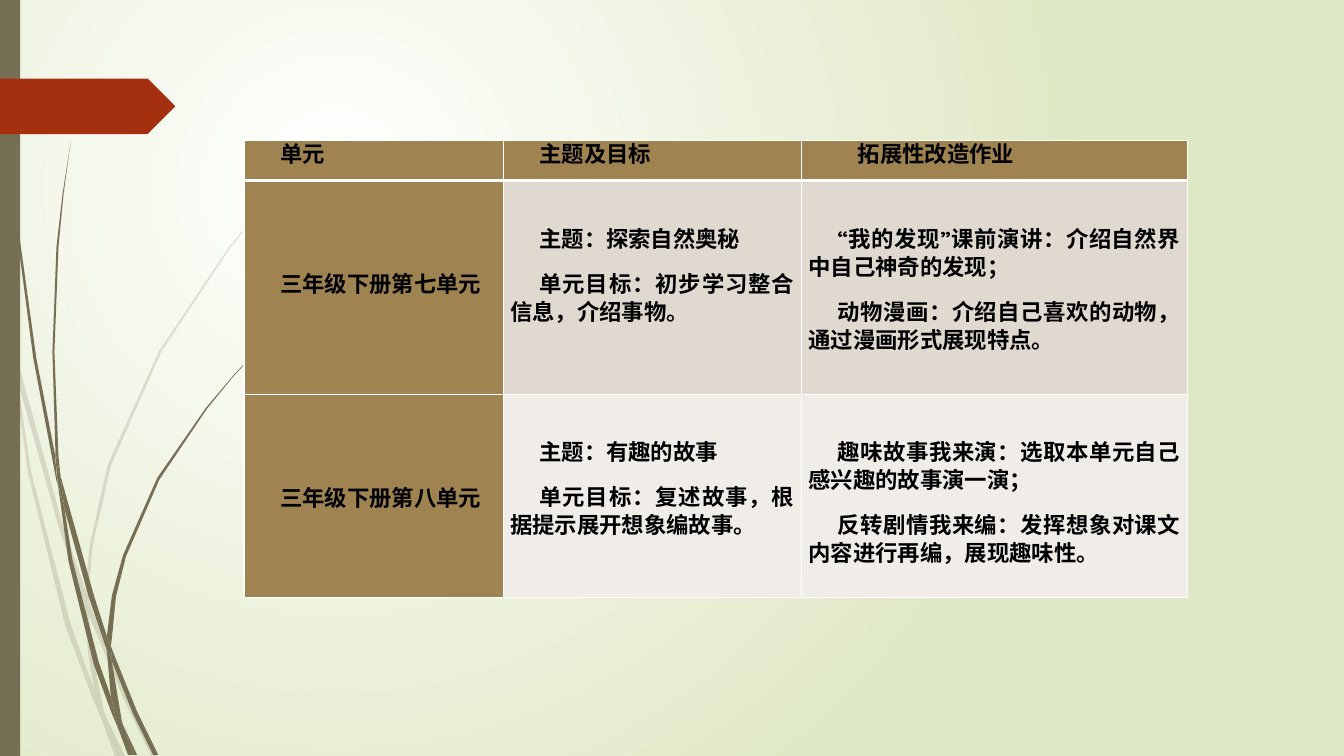
from lxml import etree
from pptx import Presentation, util as u
from pptx.dml.color import RGBColor
from pptx.enum import shapes, text
from pptx.oxml.ns import qn

PX = 9144
OLIVE, RED, BROWN, WHITE = "766F54", "A53010", "9F8351", "FFFFFF"

PALE_BLADES = [
    [(11, 350), (9, 322), (0, 282), (0, 299), (10, 344)],
    [(58, 522), (84, 599), (85, 586), (62, 520), (14, 345), (17, 376)],
    [(92, 607), (88, 596), (88, 610), (123, 694), (150, 750), (155, 750), (127, 692)],
    [(119, 750), (124, 750), (105, 711)],
    [(93, 683), (70, 619), (31, 469), (17, 376), (11, 350), (28, 470), (65, 621),
     (92, 693), (101, 714), (99, 707)],
    [(84, 599), (87, 646), (93, 683), (96, 692), (105, 711), (103, 706), (91, 646),
     (88, 610), (88, 608)],
    [(88, 584), (92, 541), (110, 462), (160, 349), (229, 245), (268, 198), (290, 175),
     (312, 154), (312, 153), (289, 175), (268, 197), (228, 244), (158, 348),
     (107, 461), (89, 541), (85, 584), (85, 586), (88, 596)],
    [(101, 714), (114, 750), (119, 750)],
    [(88, 608), (88, 610), (88, 596), (85, 586), (84, 599)],
    [(96, 692), (93, 683), (99, 707), (101, 714), (119, 750), (105, 711)],
]
DARK_BLADES = [
    [(7, 110), (17, 233), (33, 355), (56, 477), (57, 481), (55, 457), (55, 453),
     (36, 355), (19, 232), (8, 109), (5, 48), (4, 0), (3, 0), (4, 48)],
    [(88, 592), (106, 645), (106, 631), (93, 590), (60, 472), (64, 505)],
    [(113, 649), (110, 641), (111, 656), (132, 708), (152, 749), (157, 749), (136, 706)],
    [(110, 691), (98, 657), (72, 556), (64, 505), (57, 477), (68, 557), (93, 659),
     (111, 708), (117, 722), (116, 717)],
    [(60, 472), (58, 453), (54, 349), (58, 245), (63, 193), (70, 141), (62, 193),
     (56, 245), (52, 349), (55, 449)],
    [(133, 749), (136, 749), (122, 719)],
    [(57, 477), (64, 505), (60, 472), (55, 449), (55, 453)],
    [(111, 633), (115, 592), (125, 552), (158, 476), (205, 406), (231, 374), (245, 359),
     (261, 344), (260, 344), (245, 358), (231, 373), (204, 405), (156, 474),
     (122, 551), (111, 591), (106, 631), (110, 641)],
    [(117, 722), (127, 749), (131, 749)],
    [(106, 645), (110, 691), (116, 706), (122, 719), (121, 716), (111, 656), (109, 651)],
    [(106, 645), (109, 651), (111, 656), (110, 641), (106, 631)],
    [(116, 706), (110, 691), (116, 717), (117, 722), (130, 749), (133, 749), (122, 719)],
]
ROWS = [
    [["单元"], ["主题及目标"], ["拓展性改造作业"]],
    [["三年级下册第七单元"],
     ["主题：探索自然奥秘", "单元目标：初步学习整合信息，介绍事物。"],
     ["“我的发现”课前演讲：介绍自然界中自己神奇的发现；",
      "动物漫画：介绍自己喜欢的动物，通过漫画形式展现特点。"]],
    [["三年级下册第八单元"],
     ["主题：有趣的故事", "单元目标：复述故事，根据提示展开想象编故事。"],
     ["趣味故事我来演：选取本单元自己感兴趣的故事演一演；",
      "反转剧情我来编：发挥想象对课文内容进行再编，展现趣味性。"]],
]
BODY_FILLS = [BROWN, "DFD9D0", "F0EDE9"]


def rgb(color):
    """Turn a hex string into a colour."""
    return RGBColor.from_string(color)


def paint(sp, color, alpha=100):
    """Give a shape a plain fill without line or shadow."""
    sp.shadow.inherit = False
    sp.line.fill.background()
    sp.fill.solid()
    sp.fill.fore_color.rgb = rgb(color)
    if alpha < 100:
        clr = sp.fill._xPr.find(".//" + qn("a:srgbClr"))
        etree.SubElement(clr, qn("a:alpha"), val=str(alpha * 1000))


def set_background(s, inner, outer):
    """Fill the background with a circular gradient centred at the upper left."""
    fill = s.background.fill
    fill.gradient()
    for stop, color in zip(fill.gradient_stops, (inner, outer)):
        stop.color.rgb = rgb(color)
    grad = s._element.find(".//" + qn("a:gradFill"))
    grad.remove(grad.find(qn("a:lin")))
    circle = etree.SubElement(grad, qn("a:path"), path="circle")
    etree.SubElement(circle, qn("a:fillToRect"), l="50000", t="50000", r="100000", b="100000")


def add_block(s, kind, x, y, w, h, color):
    """Add a preset shape in one colour."""
    paint(s.shapes.add_shape(kind, x * PX, y * PX, w * PX, h * PX), color)


def add_blade(s, points, color, alpha=100):
    """Add one closed piece of a grass blade."""
    builder = s.shapes.build_freeform(*points[0], scale=PX)
    builder.add_line_segments(points[1:], close=True)
    paint(builder.convert_to_shape(), color, alpha)


def write(tf, lines, size=16, font="Quicksand", color="000000", bold=True, indent=29):
    """Write justified paragraphs with a first-line indent."""
    for i, line in enumerate(lines):
        p = tf.add_paragraph() if i else tf.paragraphs[0]
        p.alignment = text.PP_ALIGN.JUSTIFY
        p.line_spacing, p.space_after = u.Pt(20), u.Pt(12)
        p._p.get_or_add_pPr().set("indent", str(indent * PX))
        r = p.add_run()
        r.text = line
        r.font.size, r.font.bold, r.font.name = u.Pt(size), bold, font
        r.font.color.rgb = rgb(color)
        etree.SubElement(r._r.get_or_add_rPr(), qn("a:ea"), typeface=font)


def set_borders(cell, color, bottom=1, top=1):
    """Draw the four borders of a cell, widths in points."""
    tc_pr = cell._tc.get_or_add_tcPr()
    widths = {"lnL": 1, "lnR": 1, "lnT": top, "lnB": bottom}
    for i, (side, width) in enumerate(widths.items()):
        ln = etree.Element(qn("a:" + side), w=str(u.Pt(width)))
        fill = etree.SubElement(ln, qn("a:solidFill"))
        etree.SubElement(fill, qn("a:srgbClr"), val=color)
        tc_pr.insert(i, ln)


def add_unit_table(s, x, y, widths, heights):
    """Add the table of units, goals and homework."""
    table = s.shapes.add_table(len(heights), len(widths), x * PX, y * PX,
                               sum(widths) * PX, sum(heights) * PX).table
    for column, width in zip(table.columns, widths):
        column.width = width * PX
    for i, height in enumerate(heights):
        table.rows[i].height = height * PX
        for j, lines in enumerate(ROWS[i]):
            cell = table.cell(i, j)
            top = 0 if i == 0 else 89 if j == 0 else 44
            cell.margin_left = cell.margin_right = 7 * PX
            cell.margin_top, cell.margin_bottom = top * PX, 0
            cell.fill.solid()
            cell.fill.fore_color.rgb = rgb(BROWN if j == 0 else BODY_FILLS[i])
            set_borders(cell, WHITE, bottom=3 if i == 0 else 1, top=3 if i == 1 else 1)
            write(cell.text_frame, lines, indent=49 if (i, j) == (0, 2) else 29)


def main():
    """Build the slide and save it."""
    prs = Presentation()
    prs.slide_width, prs.slide_height = 1333 * PX, 750 * PX
    s = prs.slides.add_slide(prs.slide_layouts[6])
    set_background(s, WHITE, "DFE8C4")
    for points in PALE_BLADES:
        add_blade(s, points, OLIVE, alpha=20)
    for points in DARK_BLADES:
        add_blade(s, points, OLIVE)
    add_block(s, shapes.MSO_SHAPE.RECTANGLE, 0, 0, 20, 750, OLIVE)
    add_block(s, shapes.MSO_SHAPE.PENTAGON, 0, 78, 174, 55, RED)
    add_unit_table(s, 242, 139, [257, 296, 383], [40, 212, 202])
    prs.save("out.pptx")


if __name__ == "__main__":
    main()
